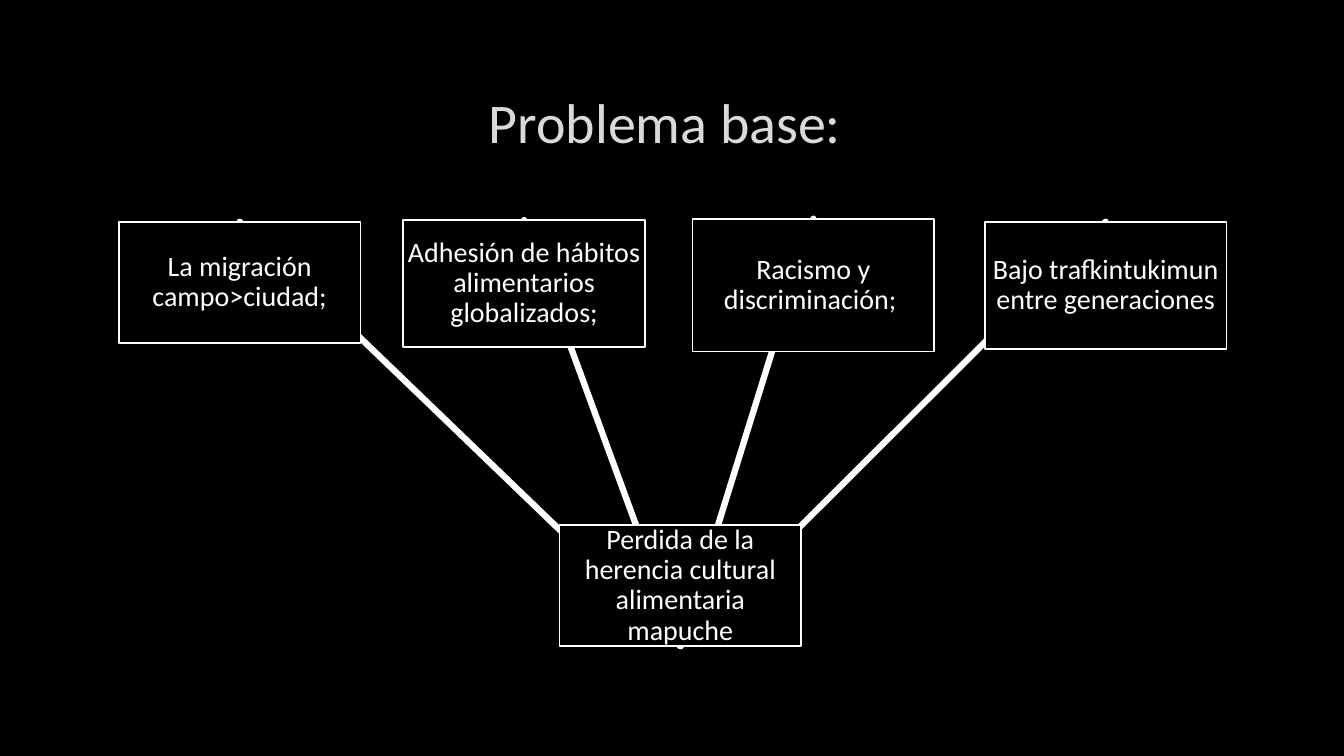
from pptx import Presentation
from pptx.dml.color import RGBColor
from pptx.enum.shapes import MSO_CONNECTOR, MSO_SHAPE
from pptx.enum.text import MSO_ANCHOR, PP_ALIGN
from pptx.oxml.ns import qn
from pptx.util import Pt
from lxml import etree

RECT = MSO_SHAPE.RECTANGLE
LINE = MSO_CONNECTOR.STRAIGHT
MIDDLE = MSO_ANCHOR.MIDDLE
CENTER = PP_ALIGN.CENTER
BLACK, WHITE, GRAY = "000000", "FFFFFF", "DADADA"
WIDTH = 172.8
TOP, BOTTOM = 0, 2

ROOT = ("Perdida de la herencia cultural alimentaria mapuche", 399.6, 375.1, 86.4)
CAUSES = [
    ("La migración campo>ciudad;", 84.8, 158.4, 86.4),
    ("Adhesión de hábitos alimentarios globalizados;", 288, 157.2, 90.7),
    ("Racismo y discriminación; ", 494.6, 156.2, 95),
    ("Bajo trafkintukimun entre generaciones", 703.4, 158.4, 90.7),
]


def paint(color, value):
    color.rgb = RGBColor.from_string(value)


def write(shape, text, size, color, inset, space):
    frame = shape.text_frame
    frame.word_wrap = True
    frame.vertical_anchor = MIDDLE
    frame.margin_left = frame.margin_right = Pt(inset)
    frame.margin_top = frame.margin_bottom = Pt(inset)
    para = frame.paragraphs[0]
    para.alignment = CENTER
    para.line_spacing = space
    run = para.add_run()
    run.text = text
    run.font.name = "Calibri"
    run.font.size = Pt(size)
    paint(run.font.color, color)


def add_title(slide, text):
    title = slide.shapes.add_textbox(Pt(72), Pt(48.2), Pt(815), Pt(76.3))
    write(title, text, 40, GRAY, 3.6, 1.0)


def add_box(slide, text, left, top, height):
    box = slide.shapes.add_shape(RECT, Pt(left), Pt(top), Pt(WIDTH), Pt(height))
    box.shadow.inherit = False
    box.fill.solid()
    paint(box.fill.fore_color, BLACK)
    paint(box.line.color, WHITE)
    box.line.width = Pt(1.25)
    write(box, text, 20, WHITE, 0.9, 0.9)
    return box


def add_link(slide, root, cause):
    link = slide.shapes.add_connector(LINE, 0, 0, 0, 0)
    link.begin_connect(root, BOTTOM)
    link.end_connect(cause, TOP)
    paint(link.line.color, WHITE)
    link.line.width = Pt(4.5)
    link.line._get_or_add_ln().set("cap", "rnd")
    etree.SubElement(link._element.spPr, qn("a:effectLst"))
    root._element.addprevious(link._element)


def main():
    deck = Presentation()
    deck.slide_width, deck.slide_height = Pt(960), Pt(540)
    slide = deck.slides.add_slide(deck.slide_layouts[6])
    slide.background.fill.solid()
    paint(slide.background.fill.fore_color, BLACK)
    add_title(slide, "Problema base: ")
    root = add_box(slide, *ROOT)
    for cause in CAUSES:
        add_link(slide, root, add_box(slide, *cause))
    deck.save("out.pptx")


if __name__ == "__main__":
    main()
